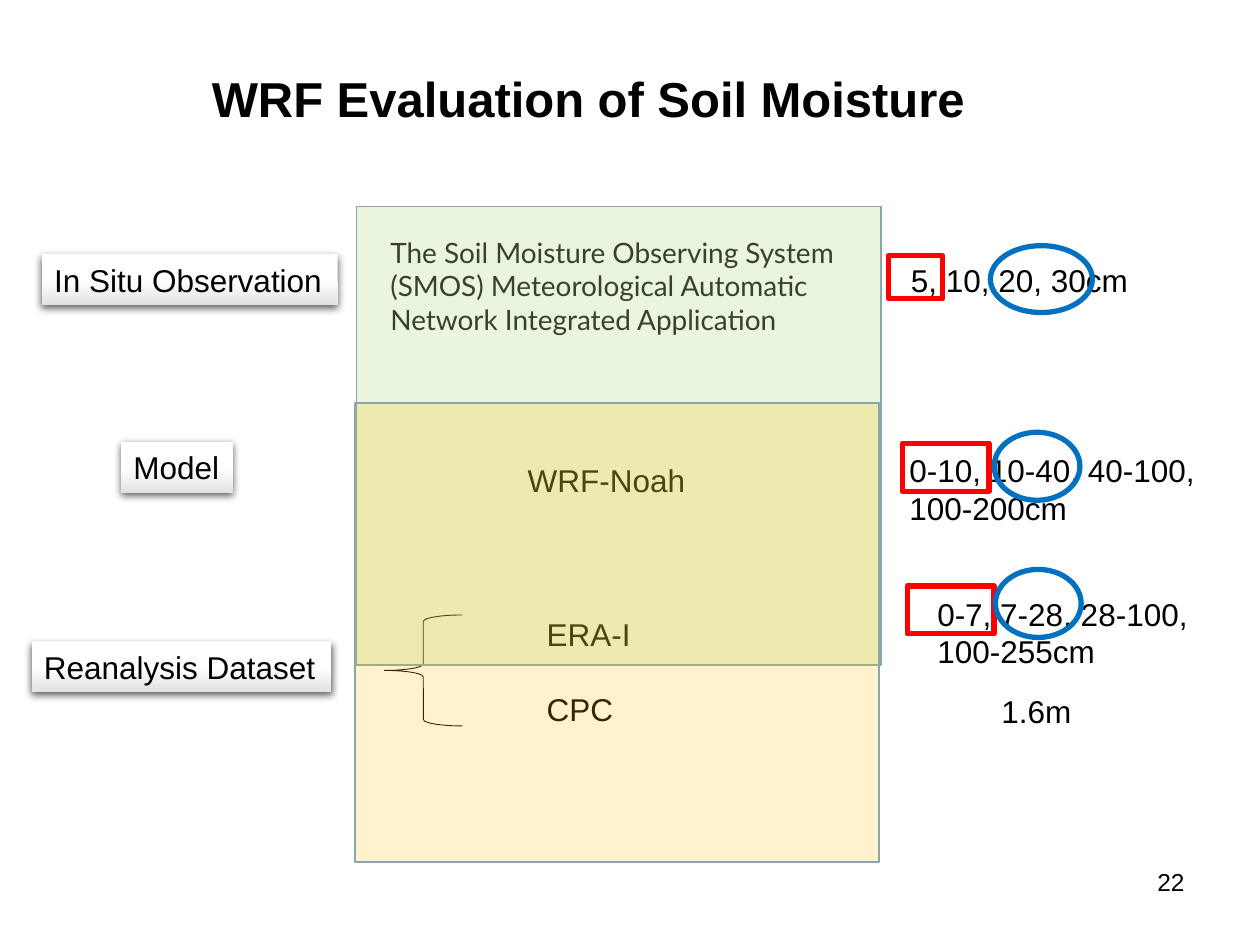
import pptx
import pptx.util
import pptx.dml.color
import pptx.enum.shapes
import pptx.enum.text
import lxml.etree
from dataclasses import dataclass

Pt = pptx.util.Pt
Kind = pptx.enum.shapes.MSO_SHAPE
Align = pptx.enum.text.PP_ALIGN
Anchor = pptx.enum.text.MSO_ANCHOR
Fit = pptx.enum.text.MSO_AUTO_SIZE
NS = "http://schemas.openxmlformats.org/drawingml/2006/main"


@dataclass(frozen=True)
class Theme:
    font: str = "Arial"
    alt: str = "Lato"
    ink: str = "000000"
    gray: str = "231F20"
    white: str = "FFFFFF"
    shade: str = "E3E3E3"
    red: str = "FF0000"
    blue: str = "0070C0"
    edge: str = "8AA6A8"
    green: str = "92D050"
    gold: str = "FFC000"
    head: int = 28
    body: int = 18
    note: int = 16
    num: int = 14


def rgb(code):
    return pptx.dml.color.RGBColor.from_string(code)


def sub(node, tag, **attrs):
    return lxml.etree.SubElement(node, f"{{{NS}}}{tag}", **attrs)


class Deck:
    """Draw styled elements on the current slide."""

    def __init__(self, theme):
        self.theme = theme
        self.show = pptx.Presentation()
        self.show.slide_width, self.show.slide_height = Pt(720), Pt(540)
        self.slide = self.show.slides.add_slide(self.show.slide_layouts[5])

    def put(self, frame, lines, size=None, font=None, color=None,
            bold=False, align=Align.LEFT, gap=0):
        for i, line in enumerate(lines):
            para = frame.add_paragraph() if i else frame.paragraphs[0]
            para.alignment = align
            if i and gap:
                para.space_before = Pt(gap)
            run = para.add_run()
            run.text = line
            run.font.name = font or self.theme.font
            run.font.size = Pt(size or self.theme.body)
            run.font.bold = bold
            run.font.color.rgb = rgb(color or self.theme.ink)

    def title(self, text, x, y, w, h):
        box = self.slide.shapes.title
        box.left, box.top, box.width, box.height = map(Pt, (x, y, w, h))
        frame = box.text_frame
        frame.vertical_anchor = Anchor.MIDDLE
        self.put(frame, [text], self.theme.head, bold=True)
        frame.paragraphs[0].line_spacing = 0.9

    def text(self, lines, x, y, w, h, wrap=True, **style):
        box = self.slide.shapes.add_textbox(*map(Pt, (x, y, w, h)))
        box.text_frame.word_wrap = wrap
        self.put(box.text_frame, lines, **style)

    def shape(self, kind, x, y, w, h, line=None, width=1):
        item = self.slide.shapes.add_shape(kind, *map(Pt, (x, y, w, h)))
        item.shadow.inherit = False
        item.fill.background()
        if line:
            item.line.color.rgb = rgb(line)
            item.line.width = Pt(width)
        else:
            item.line.fill.background()
        return item

    def label(self, text, x, y, w, h=28.8):
        item = self.shape(Kind.RECTANGLE, x, y, w, h)
        item.fill.gradient()
        item.fill.gradient_angle = 270
        tones = ((0.5, self.theme.white), (1, self.theme.shade))
        for stop, (place, tone) in zip(item.fill.gradient_stops, tones):
            stop.position = place
            stop.color.rgb = rgb(tone)
        glow = item._element.spPr.find(f"{{{NS}}}effectLst")
        cast = sub(glow, "outerShdw", blurRad=str(Pt(4.5)), dist=str(Pt(1.5)),
                   dir="5400000", algn="ctr", rotWithShape="0")
        sub(sub(cast, "srgbClr", val=self.theme.ink), "alpha", val="63000")
        frame = item.text_frame
        frame.word_wrap = False
        frame.auto_size = Fit.SHAPE_TO_FIT_TEXT
        frame.vertical_anchor = Anchor.TOP
        self.put(frame, [text])

    def layer(self, color, x, y, w, h):
        item = self.shape(Kind.RECTANGLE, x, y, w, h, self.theme.edge)
        item.fill.solid()
        item.fill.fore_color.rgb = rgb(color)
        tint = item._element.spPr.find(f"{{{NS}}}solidFill")
        sub(tint[0], "alpha", val="20000")

    def save(self):
        self.show.save("out.pptx")


def main():
    look = Theme()
    deck = Deck(look)
    deck.title("WRF Evaluation of Soil Moisture", 113.8, 28.1, 581.8, 59.8)
    deck.text(["5, 10, 20, 30cm"], 513.4, 145.4, 139.7, 28.8, wrap=False)
    deck.text(["0-10, 10-40, 40-100,", "100-200cm"], 512.6, 254.2, 307.4, 51)
    deck.text(["22"], 516.2, 491.8, 167.8, 37.4, size=look.num,
              align=Align.RIGHT)
    deck.text(["The Soil Moisture Observing System (SMOS) Meteorological "
               "Automatic Network Integrated Application"],
              216, 131, 286.6, 65.5, size=look.note, font=look.alt,
              color=look.gray)
    for name, x, y, w in (("In Situ Observation", 23.8, 145.4, 169.2),
                          ("Model", 69.1, 252.7, 64.1),
                          ("Reanalysis Dataset", 18, 366.5, 171.4)):
        deck.label(name, x, y, w)
    deck.text(["WRF-Noah"], 294.5, 259.9, 105.1, 28.8, wrap=False)
    deck.text(["ERA-I", "CPC"], 305.3, 347.8, 116.6, 72.7, gap=21.6)
    deck.shape(Kind.LEFT_BRACE, 219.6, 351.4, 44.6, 63.4, look.ink, 0.5)
    deck.text(["0-7, 7-28, 28-100,", "100-255cm"], 528.5, 336.2, 200.9, 51)
    deck.text(["1.6m"], 565.2, 391.7, 54.7, 28.8, wrap=False)
    for box in ((507.6, 146.2, 31, 24.5), (515.5, 253.4, 49.7, 27.4),
                (518.4, 334.8, 49.7, 27.4)):
        deck.shape(Kind.RECTANGLE, *box, look.red, 3)
    for ring in ((565.9, 140.4, 58.3, 38.2), (568.1, 247, 49, 38.9),
                 (568.8, 325.4, 49, 38.9)):
        deck.shape(Kind.OVAL, *ring, look.blue, 3)
    deck.layer(look.green, 203.8, 118.1, 299.5, 262.1)
    deck.layer(look.gold, 203, 230.4, 299.5, 262.1)
    deck.save()


if __name__ == "__main__":
    main()
